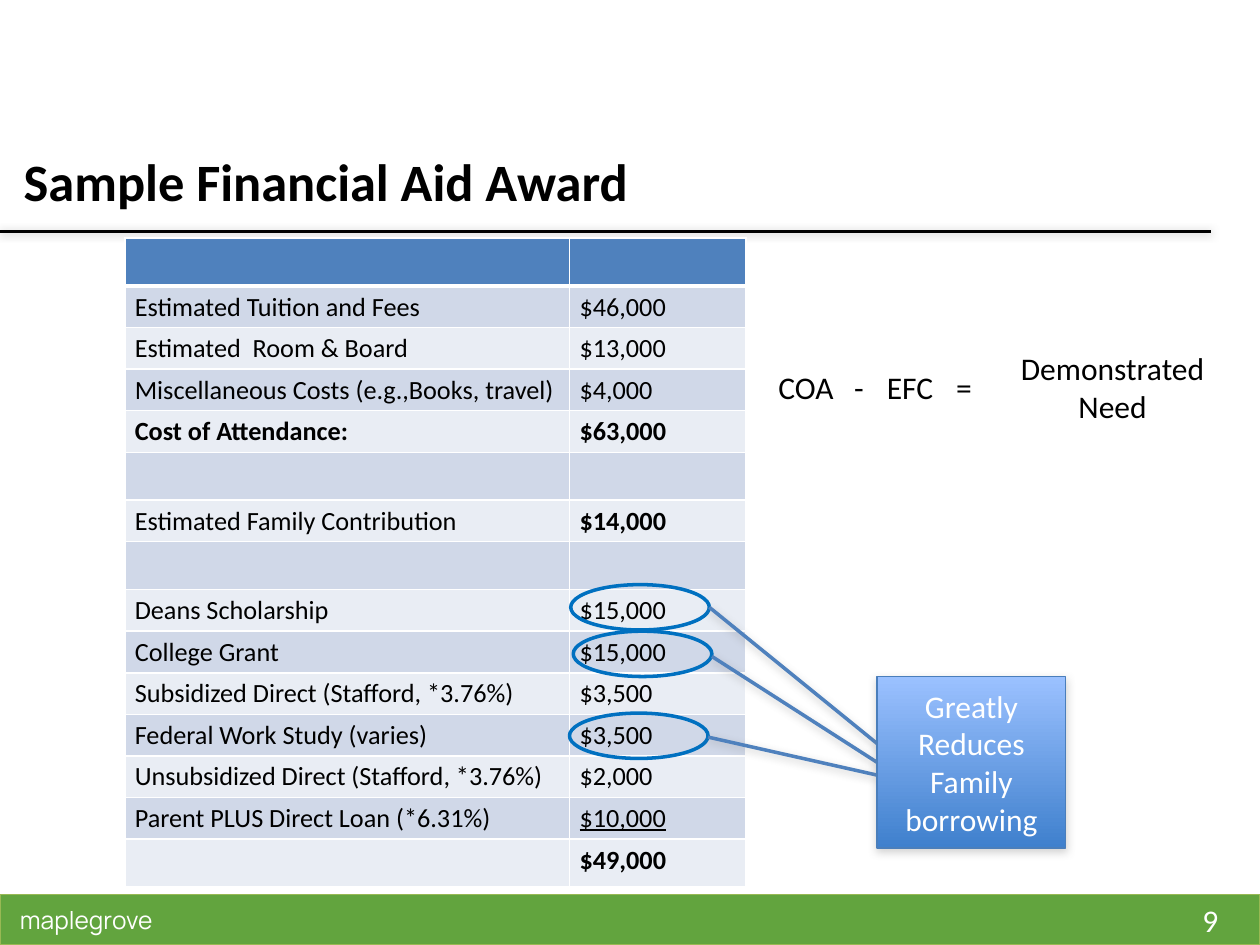
from dataclasses import dataclass

from lxml.etree import SubElement
from pptx import Presentation
from pptx.dml.color import RGBColor
from pptx.enum.shapes import MSO_CONNECTOR, MSO_SHAPE
from pptx.enum.text import MSO_ANCHOR, PP_ALIGN
from pptx.oxml.ns import qn
from pptx.util import Inches, Pt


@dataclass(frozen=True)
class Theme:
    font: str = "Calibri"
    brand_font: str = "Manrope"
    black: str = "000000"
    white: str = "FFFFFF"
    green: str = "62A43E"
    green_edge: str = "98B954"
    blue: str = "4F81BD"
    ring: str = "0070C0"
    callout_edge: str = "4A7EBB"
    callout_top: str = "9BC1FF"
    callout_bottom: str = "3F80CD"
    shadow: str = "808080"
    bands: tuple = ("E9EDF4", "D0D8E8")
    title_size: int = 30
    body_size: int = 18
    table_size: int = 15
    brand_size: int = 14


def rgb(color):
    return RGBColor.from_string(color)


def set_all(target, values):
    for name, value in values.items():
        setattr(target, name, value)


class SlideBuilder:
    def __init__(self, page, theme):
        self.page = page
        self.theme = theme

    def add_lines(self, frame, lines, size=None, color=None, align=PP_ALIGN.LEFT, **style):
        values = {"name": self.theme.font, "size": Pt(size or self.theme.body_size), **style}
        for index, line in enumerate(lines):
            para = frame.paragraphs[0] if index == 0 else frame.add_paragraph()
            para.alignment = align
            span = para.add_run()
            span.text = line
            set_all(span.font, values)
            span.font.color.rgb = rgb(color or self.theme.black)

    def text(self, area, lines, anchor=MSO_ANCHOR.TOP, wrap=True, **style):
        box = self.page.shapes.add_textbox(*map(Inches, area))
        set_all(box.text_frame, {"word_wrap": wrap, "vertical_anchor": anchor})
        self.add_lines(box.text_frame, lines, **style)

    def shape(self, kind, area, line, width, fill=None):
        """Draw a preset shape; fill is one colour, a (top, bottom) pair or None."""
        shape = self.page.shapes.add_shape(kind, *map(Inches, area))
        shape.shadow.inherit = False
        shape.line.color.rgb = rgb(line)
        shape.line.width = Pt(width)
        if fill is None:
            shape.fill.background()
        elif isinstance(fill, tuple):
            shape.fill.gradient()
            shape.fill.gradient_angle = 270
            for stop, color in zip(shape.fill.gradient_stops, fill):
                stop.color.rgb = rgb(color)
        else:
            shape.fill.solid()
            shape.fill.fore_color.rgb = rgb(fill)
        return shape

    def line(self, start, end, color, width, **shadow):
        line = self.page.shapes.add_connector(
            MSO_CONNECTOR.STRAIGHT, *map(Inches, (*start, *end)))
        line.line.color.rgb = rgb(color)
        line.line.width = Pt(width)
        SubElement(line._element.spPr, qn("a:effectLst"))
        self.cast_shadow(line, **shadow)

    def cast_shadow(self, shape, opacity, distance):
        """Put a soft shadow straight below the shape; distance is in points."""
        effects = shape._element.spPr.find(qn("a:effectLst"))
        shadow = SubElement(effects, qn("a:outerShdw"), blurRad=str(Pt(5)),
                            dist=str(Pt(distance)), dir="5400000", rotWithShape="0")
        color = SubElement(shadow, qn("a:srgbClr"), val=self.theme.shadow)
        SubElement(color, qn("a:alpha"), val=str(opacity * 1000))

    def cell_borders(self, cell, top, bottom):
        properties = cell._tc.get_or_add_tcPr()
        for side, width in (("L", 1), ("R", 1), ("T", top), ("B", bottom)):
            border = SubElement(properties, qn(f"a:ln{side}"), w=str(Pt(width)))
            fill = SubElement(border, qn("a:solidFill"))
            SubElement(fill, qn("a:srgbClr"), val=self.theme.white)

    def table(self, left, top, widths, row_height, rows, styles):
        """Draw a banded table; styles maps (row, column) to font values."""
        table = self.page.shapes.add_table(
            len(rows), len(widths), Inches(left), Inches(top),
            Inches(sum(widths)), Inches(row_height * len(rows))).table
        for column, width in zip(table.columns, widths):
            column.width = Inches(width)
        margins = {"margin_left": Inches(0.08), "margin_right": Inches(0.08),
                   "margin_top": Inches(0.04), "margin_bottom": Inches(0.04)}
        for r, row in enumerate(rows):
            table.rows[r].height = Inches(row_height)
            for c, value in enumerate(row):
                cell = table.cell(r, c)
                set_all(cell, margins)
                self.cell_borders(cell, 3 if r == 1 else 1, 3 if r == 0 else 1)
                cell.fill.solid()
                cell.fill.fore_color.rgb = rgb(
                    self.theme.bands[r % 2] if r else self.theme.blue)
                if value:
                    style = {"bold": False, **styles.get((r, c), {})}
                    self.add_lines(cell.text_frame, [value], self.theme.table_size, **style)


AWARD_ROWS = [
    ("", ""),
    ("Estimated Tuition and Fees", "$46,000"),
    ("Estimated  Room & Board", "$13,000"),
    ("Miscellaneous Costs (e.g.,Books, travel)", "$4,000"),
    ("Cost of Attendance:", "$63,000"),
    ("", ""),
    ("Estimated Family Contribution", "$14,000"),
    ("", ""),
    ("Deans Scholarship", "$15,000"),
    ("College Grant", "$15,000"),
    ("Subsidized Direct (Stafford, *3.76%)", "$3,500"),
    ("Federal Work Study (varies)", "$3,500"),
    ("Unsubsidized Direct (Stafford, *3.76%)", "$2,000"),
    ("Parent PLUS Direct Loan (*6.31%)", "$10,000"),
    ("", "$49,000"),
]
BOLD = {"bold": True}
AWARD_STYLES = {(4, 0): BOLD, (4, 1): BOLD, (6, 1): BOLD, (14, 1): BOLD,
                (13, 1): {"underline": True}}
FORMULA = [("COA", 6.08, 0.71), ("-", 6.68, 0.28), ("EFC", 6.94, 0.68), ("=", 7.49, 0.33)]
# Ring corner, then start and end of the line to the callout
RINGS = [
    ((4.53, 4.64), (5.63, 4.82), (7.12, 6.03)),
    ((4.55, 5.01), (5.65, 5.21), (7.21, 6.21)),
    ((4.52, 5.66), (5.62, 5.85), (7.22, 6.21)),
]


def main():
    deck = Presentation()
    deck.slide_width, deck.slide_height = Inches(10), Inches(7.5)
    theme = Theme()
    slide = SlideBuilder(deck.slides.add_slide(deck.slide_layouts[6]), theme)
    middle, center = MSO_ANCHOR.MIDDLE, PP_ALIGN.CENTER

    slide.shape(MSO_SHAPE.RECTANGLE, (0, 7.1, 10, 0.4), theme.green_edge, 0.75, theme.green)
    slide.line((0, 1.84), (9.61, 1.84), theme.black, 1.5, opacity=50, distance=0.5)
    slide.text((9.21, 7.1, 0.79, 0.4), ["9"], middle, color=theme.white, align=center)
    slide.text((0.06, 7.1, 1.4, 0.4), ["maplegrove"], middle, size=theme.brand_size,
               color=theme.white, name=theme.brand_font)
    slide.text((0.09, 1.07, 9, 0.72), ["Sample Financial Aid Award"], middle,
               size=theme.title_size, bold=True)

    slide.table(0.99, 1.89, (3.53, 1.4), 0.33, AWARD_ROWS, AWARD_STYLES)

    for term, left, width in FORMULA:
        slide.text((left, 2.87, width, 0.4), [term], wrap=False)
    slide.text((7.82, 2.72, 2.02, 0.71), ["Demonstrated", "Need"], align=center)

    for corner, start, end in RINGS:
        slide.shape(MSO_SHAPE.OVAL, (*corner, 1.1, 0.36), theme.ring, 2)
        slide.line(start, end, theme.blue, 2, opacity=38, distance=1.6)

    callout = slide.shape(MSO_SHAPE.RECTANGLE, (6.96, 5.37, 1.5, 1.36), theme.callout_edge,
                          0.75, (theme.callout_top, theme.callout_bottom))
    slide.cast_shadow(callout, opacity=35, distance=1.8)
    set_all(callout.text_frame, {"word_wrap": True, "vertical_anchor": middle})
    slide.add_lines(callout.text_frame, ["Greatly Reduces Family borrowing"],
                    color=theme.white, align=center)

    deck.save("out.pptx")


if __name__ == "__main__":
    main()
